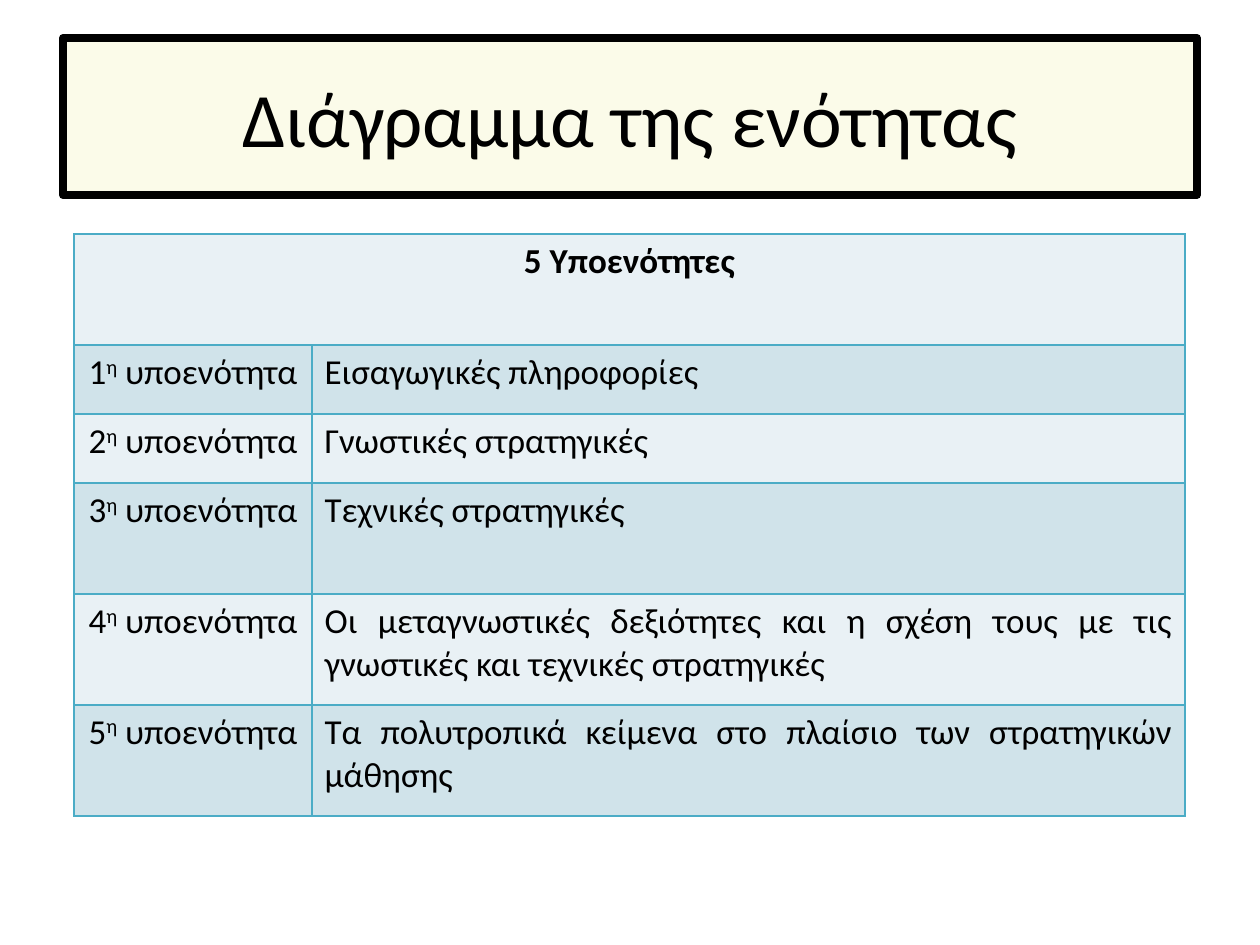
from lxml import etree
from pptx import Presentation
from pptx.dml.color import RGBColor
from pptx.enum.shapes import MSO_SHAPE
from pptx.enum.text import MSO_ANCHOR, PP_ALIGN
from pptx.oxml.ns import qn
from pptx.util import Emu, Pt

RECT = MSO_SHAPE.RECTANGLE
MIDDLE = MSO_ANCHOR.MIDDLE
LEFT, CENTER, JUSTIFY = PP_ALIGN.LEFT, PP_ALIGN.CENTER, PP_ALIGN.JUSTIFY

BLACK = RGBColor(0x00, 0x00, 0x00)
CREAM = RGBColor(0xFB, 0xFB, 0xE9)
PALE = RGBColor(0xE9, 0xF1, 0xF5)
BLUE = RGBColor(0xD0, 0xE3, 0xEA)
TEAL = RGBColor(0x4B, 0xAC, 0xC6)

PX_PER_INCH = 126
TITLE_FORMAT = {"name": "Calibri", "size": Pt(44), "bold": False}
HEAD_FORMAT = {"name": "Calibri", "size": Pt(20), "bold": True}
BODY_FORMAT = {**HEAD_FORMAT, "bold": False}

TITLE = "Διάγραμμα της ενότητας"
HEADING = "5 Υποενότητες"
COLUMNS = [238, 873]
HEADING_HEIGHT = 111
SUBUNITS = [
    ("Εισαγωγικές πληροφορίες", 69, JUSTIFY),
    ("Γνωστικές στρατηγικές", 69, JUSTIFY),
    ("Τεχνικές στρατηγικές", 111, LEFT),
    ("Οι μεταγνωστικές δεξιότητες και η σχέση τους με τις "
     "γνωστικές και τεχνικές στρατηγικές", 111, JUSTIFY),
    ("Τα πολυτροπικά κείμενα στο πλαίσιο των στρατηγικών μάθησης",
     111, JUSTIFY),
]


def px(n):
    return Emu(round(n * 914400 / PX_PER_INCH))


def add_run(p, text, fmt, baseline=None):
    r = p.add_run()
    r.text = text
    for key, value in fmt.items():
        setattr(r.font, key, value)
    r.font.color.rgb = BLACK
    if baseline:
        r.font._element.set("baseline", str(baseline))


def add_title(s, x, y, w, h):
    sp = s.shapes.add_shape(RECT, px(x), px(y), px(w), px(h))
    sp.shadow.inherit = False
    sp.fill.solid()
    sp.fill.fore_color.rgb = CREAM
    sp.line.color.rgb = BLACK
    sp.line.width = Pt(4.5)
    etree.SubElement(sp.line._get_or_add_ln(), qn("a:round"))
    tf = sp.text_frame
    tf.word_wrap = True
    tf.vertical_anchor = MIDDLE
    p = tf.paragraphs[0]
    p.alignment = CENTER
    add_run(p, TITLE, TITLE_FORMAT)


def style_cell(cell, color):
    tc_pr = cell._tc.get_or_add_tcPr()
    for side in ("lnL", "lnR", "lnT", "lnB"):
        ln = etree.SubElement(tc_pr, qn(f"a:{side}"), w=str(Pt(1)))
        fill = etree.SubElement(ln, qn("a:solidFill"))
        etree.SubElement(fill, qn("a:srgbClr"), val=str(TEAL))
    cell.fill.solid()
    cell.fill.fore_color.rgb = color


def add_subunits(s, x, y):
    heights = [HEADING_HEIGHT] + [height for _, height, _ in SUBUNITS]
    table = s.shapes.add_table(len(heights), len(COLUMNS), px(x), px(y),
                               px(sum(COLUMNS)), px(sum(heights))).table
    for column, width in zip(table.columns, COLUMNS):
        column.width = px(width)
    for i, height in enumerate(heights):
        table.rows[i].height = px(height)
        for j in range(len(COLUMNS)):
            style_cell(table.cell(i, j), BLUE if i % 2 else PALE)

    table.cell(0, 0).merge(table.cell(0, 1))
    p = table.cell(0, 0).text_frame.paragraphs[0]
    p.alignment = CENTER
    add_run(p, HEADING, HEAD_FORMAT)

    for i, (text, _, alignment) in enumerate(SUBUNITS, start=1):
        p = table.cell(i, 0).text_frame.paragraphs[0]
        p.alignment = CENTER
        add_run(p, str(i), BODY_FORMAT)
        add_run(p, "η", BODY_FORMAT, baseline=30000)
        add_run(p, " υποενότητα", BODY_FORMAT)
        p = table.cell(i, 1).text_frame.paragraphs[0]
        p.alignment = alignment
        add_run(p, text, BODY_FORMAT)


def main():
    prs = Presentation()
    prs.slide_width, prs.slide_height = px(1260), px(945)
    s = prs.slides.add_slide(prs.slide_layouts[6])
    add_title(s, 63, 38, 1134, 157)
    add_subunits(s, 74, 234)
    prs.save("out.pptx")


if __name__ == "__main__":
    main()
